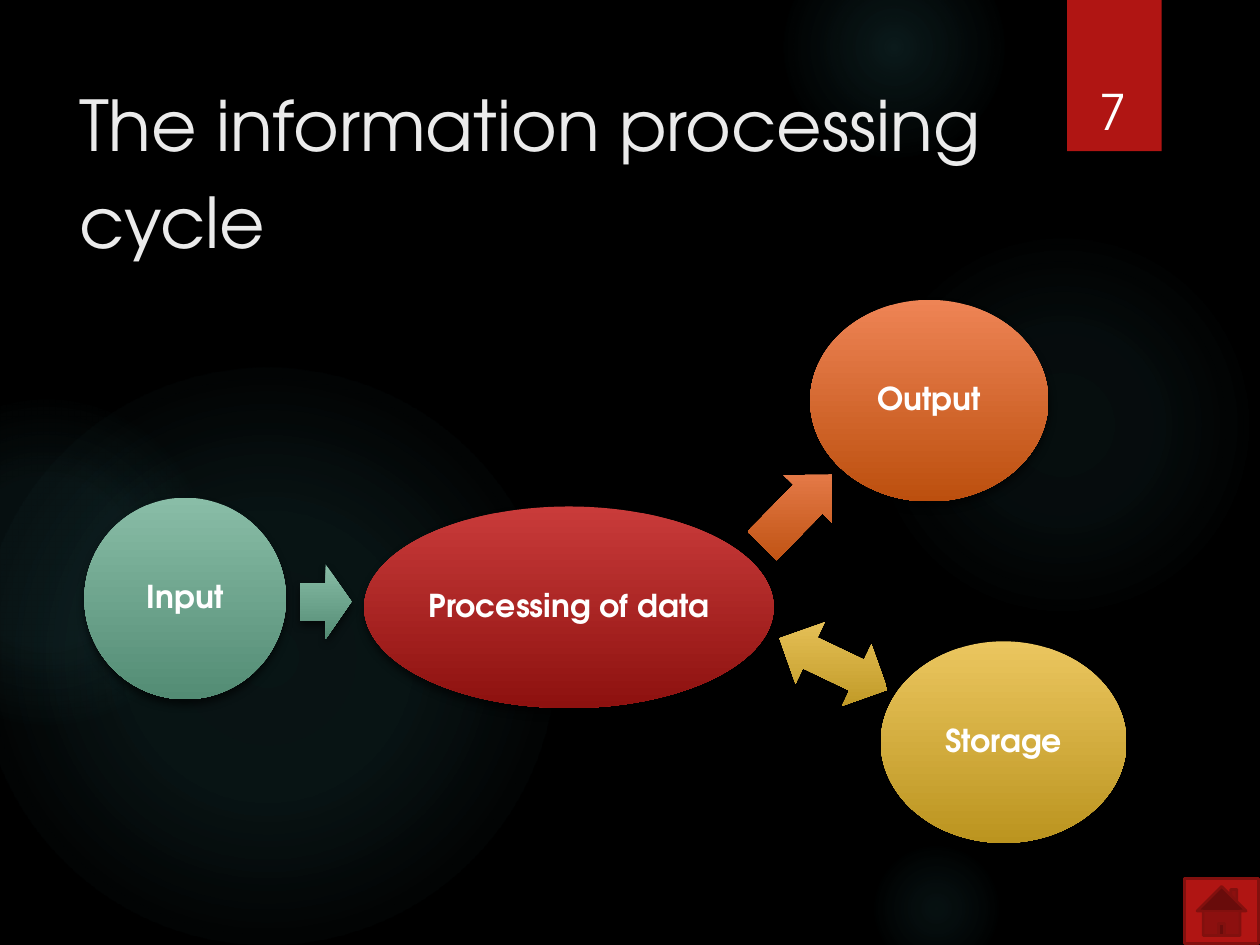
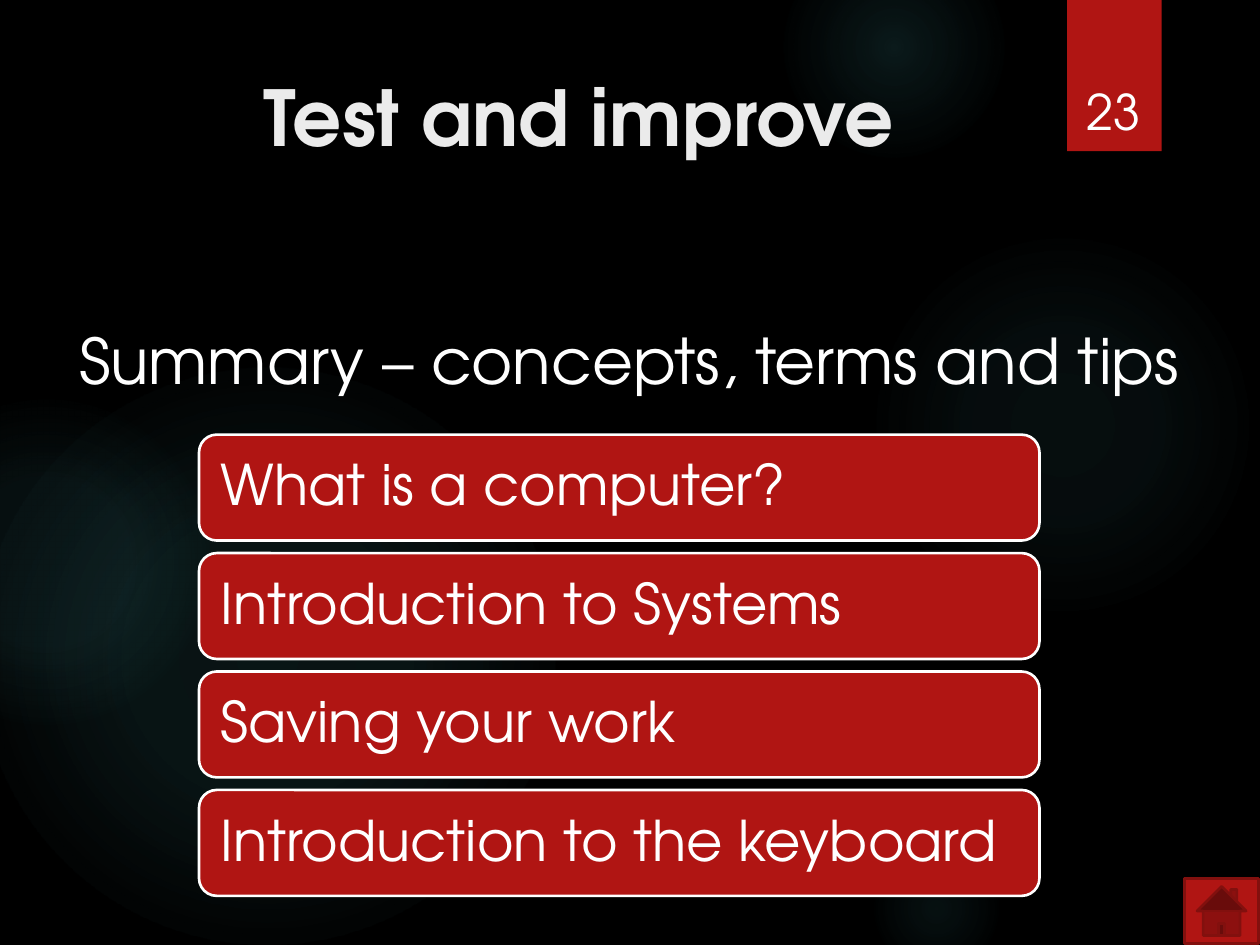
from dataclasses import dataclass

from lxml import etree
from pptx import Presentation
from pptx import util as u
from pptx.dml.color import RGBColor
from pptx.enum import shapes, text
from pptx.oxml import ns

COLS, ROWS = 100, 75
CELL = u.Inches(0.1)
MSO, ALIGN, ANCHOR = shapes.MSO_SHAPE, text.PP_ALIGN, text.MSO_ANCHOR


@dataclass(frozen=True)
class Theme:
    """Colours, font and type sizes shared by the slides."""
    font: str = "TeX Gyre Adventor"
    back: str = "000000"
    white: str = "FFFFFF"
    title: str = "EBEBEB"
    accent: str = "B01513"
    edge: str = "82100E"
    glow: str = "50B9C1"
    green: tuple = ("89BDA7", "538C74")
    red: tuple = ("C93B3A", "8D110F")
    orange: tuple = ("EE8455", "BC4F0E")
    gold: tuple = ("EBC65F", "BB941F")
    title_size: int = 40
    heading_size: int = 44
    summary_size: int = 36
    topic_size: int = 32
    number_size: int = 28
    node_size: int = 18


T = Theme()

GLOWS = (
    (68.9, 18.3, 30.8, (7, 6), 69),
    (62.2, -5, 17.5, (14, 7), 73),
    (68.9, 66.7, 10.8, (9, 5), 66),
    (-1.7, 29.2, 45.8, (11, 10), 75),
    (-9.2, 31.7, 25.8, (8, 8), 72),
)

NODES = (
    ("Processing of data", 28.9, 40.2, 32.5, T.red),
    ("Output", 64.3, 23.8, 18.9, T.orange),
    ("Storage", 69.9, 50.9, 19.5, T.gold),
    ("Input", 6.7, 39.5, 16, T.green),
)

ARROWS = (
    (MSO.RIGHT_ARROW, (59.3, 37.8, 7.9, 5.4), 314.4, (0.6, 0.5), T.orange),
    (MSO.LEFT_RIGHT_ARROW, (61.4, 50, 9.5, 5.4), 25.5, (0.5, 0.5), T.gold),
    (MSO.RIGHT_ARROW, (23.8, 44.8, 4.1, 5.9), 0, (0.5, 0.5), T.green),
)

TOPICS = ("What is a computer?", "Introduction to Systems",
          "Saving your work", "Introduction to the keyboard")


def place(box):
    """Turn left, top, width and height in grid cells into lengths."""
    return [int(n * CELL) for n in box]


def node(parent, tag, **attrs):
    """Add one DrawingML element with its attributes."""
    return etree.SubElement(parent, ns.qn(tag), {k: str(v) for k, v in attrs.items()})


def color_node(parent, color, alpha):
    """Add an RGB colour with an opacity in percent."""
    rgb = node(parent, "a:srgbClr", val=color)
    if alpha < 100:
        node(rgb, "a:alpha", val=alpha * 1000)


def gradient(sp, stops, radial=False):
    """Fill a shape with a vertical or radial gradient."""
    fill = etree.Element(ns.qn("a:gradFill"), rotWithShape="0")
    stop_list = node(fill, "a:gsLst")
    for pos, color, alpha in stops:
        color_node(node(stop_list, "a:gs", pos=pos * 1000), color, alpha)
    if radial:
        centre = node(fill, "a:path", path="circle")
        node(centre, "a:fillToRect", l=50000, t=50000, r=50000, b=50000)
    else:
        node(fill, "a:lin", ang=5400000, scaled=0)
    sp.element.spPr.insert(2, fill)


def shadow(sp, alpha, blur, dist):
    """Cast a soft black shadow straight down."""
    effects = sp.element.spPr.find(ns.qn("a:effectLst"))
    outer = node(effects, "a:outerShdw", blurRad=u.Pt(blur), dist=u.Pt(dist),
                 dir=5400000, algn="ctr", rotWithShape=0)
    color_node(outer, T.back, alpha)


def shape(s, kind, box, fill=None, line=None):
    """Add a preset shape with an optional solid fill and outline."""
    sp = s.shapes.add_shape(kind, *place(box))
    sp.shadow.inherit = False
    if fill:
        sp.fill.solid()
        sp.fill.fore_color.rgb = RGBColor.from_string(fill)
    if line:
        sp.line.color.rgb = RGBColor.from_string(line)
        sp.line.width = u.Pt(1.5)
    else:
        sp.line.fill.background()
    return sp


def shaded(s, kind, box, colors):
    """Add a shape with a two-colour gradient and a shadow."""
    sp = shape(s, kind, box)
    gradient(sp, [(0, colors[0], 100), (100, colors[1], 100)])
    shadow(sp, 60, 5, 3)
    return sp


def write(sp, words, size, color=T.white, bold=False, align=ALIGN.LEFT,
          anchor=ANCHOR.TOP, spacing=1, wrap=True, inset=None):
    """Write one formatted paragraph into a shape or text box."""
    tf = sp.text_frame
    tf.word_wrap = wrap
    tf.vertical_anchor = anchor
    if inset is not None:
        tf.margin_left = tf.margin_right = u.Inches(inset)
        tf.margin_top = tf.margin_bottom = u.Inches(inset)
    p = tf.paragraphs[0]
    p.alignment, p.line_spacing = align, spacing
    r = p.add_run()
    r.text = words
    r.font.name, r.font.size, r.font.bold = T.font, u.Pt(size), bold
    r.font.color.rgb = RGBColor.from_string(color)


def label(s, box, words, size, **style):
    """Add a text box."""
    write(s.shapes.add_textbox(*place(box)), words, size, **style)


def new_slide(prs, number):
    """Add a slide with glows, number ribbon and home button."""
    s = prs.slides.add_slide(prs.slide_layouts[6])
    for x, y, size, (inner, middle), end in GLOWS:
        glow = shape(s, MSO.OVAL, (x, y, size, size))
        stops = [(0, T.glow, inner), (36, T.glow, middle), (end, T.glow, 0)]
        gradient(glow, stops, radial=True)
    ribbon = shape(s, MSO.RECTANGLE, (84.7, 0, 7.5, 12), T.accent)
    shadow(ribbon, 45, 3, 2)
    label(s, (84.9, 3.2, 6.9, 8.4), str(number), T.number_size,
          align=ALIGN.CENTER, anchor=ANCHOR.BOTTOM)
    shape(s, MSO.ACTION_BUTTON_HOME, (94, 69.7, 5.9, 5.2), T.accent, T.edge)
    return s


def cycle_slide(prs):
    """Build the diagram of the processing cycle."""
    s = new_slide(prs, 7)
    label(s, (5.3, 5, 89.2, 15.3), "The information processing cycle",
          T.title_size, color=T.title, spacing=1.15)
    for kind, box, angle, adjust, colors in ARROWS:
        arrow = shaded(s, kind, box, colors)
        arrow.rotation = angle
        for i, value in enumerate(adjust):
            arrow.adjustments[i] = value
    for words, x, y, width, colors in NODES:
        oval = shaded(s, MSO.OVAL, (x, y, width, 16), colors)
        write(oval, words, T.node_size, bold=True, align=ALIGN.CENTER,
              anchor=ANCHOR.MIDDLE, spacing=0.9, wrap=False, inset=0.03)


def summary_slide(prs):
    """Build the list of summary topics."""
    s = new_slide(prs, 23)
    label(s, (5.3, 5, 81.3, 15.3), "Test and improve", T.heading_size,
          color=T.title, bold=True, align=ALIGN.CENTER)
    label(s, (5.3, 24.1, 91.5, 17.2), "Summary – concepts, terms and tips",
          T.summary_size, spacing=1.15)
    for i, words in enumerate(TOPICS):
        bar = shape(s, MSO.ROUNDED_RECTANGLE, (15.8, 34.5 + 9.4 * i, 66.7, 8.4),
                    T.accent, T.white)
        write(bar, words, T.topic_size, anchor=ANCHOR.MIDDLE,
              spacing=0.9, inset=0.13)


def main():
    """Build and save the presentation."""
    prs = Presentation()
    prs.slide_width, prs.slide_height = COLS * CELL, ROWS * CELL
    back = prs.slide_master.background.fill
    back.solid()
    back.fore_color.rgb = RGBColor.from_string(T.back)
    cycle_slide(prs)
    summary_slide(prs)
    prs.save("out.pptx")


if __name__ == "__main__":
    main()
